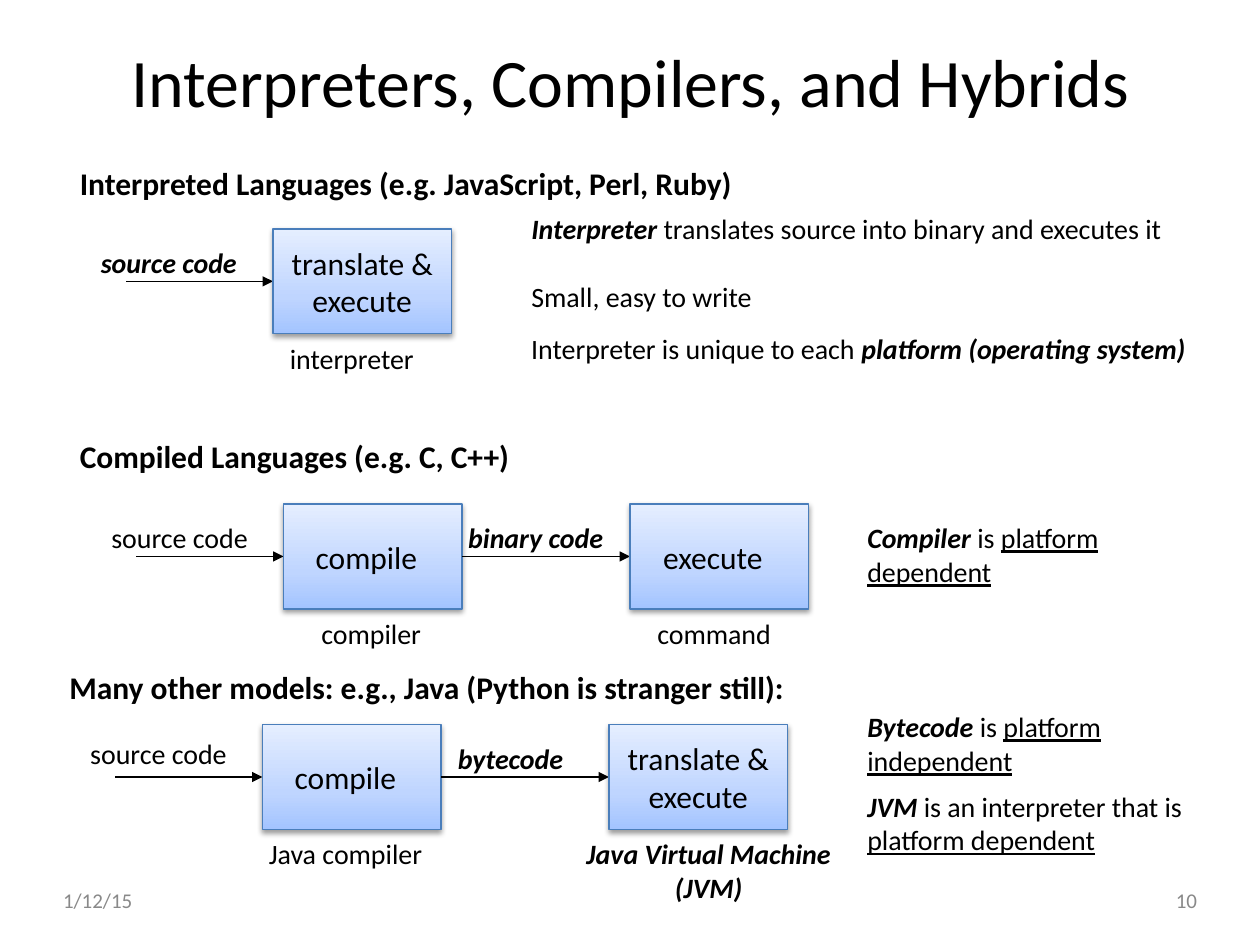
import lxml.etree
import pptx
import pptx.dml.color
import pptx.enum.shapes
import pptx.enum.text
import pptx.oxml
import pptx.oxml.ns
import pptx.util

COLUMNS, ROWS = 120, 90
STAGE_WIDTH, STAGE_HEIGHT = 17, 10
ALIGN = pptx.enum.text.PP_ALIGN
ANCHOR = pptx.enum.text.MSO_ANCHOR
STAGE_STOPS = [(0, "E5EEFF"), (65, "BFD5FF"), (100, "A3C4FF")]


def grid(count):
    """Turn a number of grid columns or rows into a length."""
    return pptx.util.Inches(count / 12)


def color(code):
    """Turn a hex string into a colour."""
    return pptx.dml.color.RGBColor.from_string(code)


def child(parent, tag, **attributes):
    """Append a DrawingML element to a parent."""
    return lxml.etree.SubElement(parent, pptx.oxml.ns.qn(tag), **attributes)


def write(shape, spans, size, align=ALIGN.LEFT, anchor=ANCHOR.TOP, inset=0.05, code="000000"):
    """Fill a shape with one paragraph of (text, style letters) spans."""
    frame = shape.text_frame
    frame.word_wrap = True
    frame.vertical_anchor = anchor
    frame.margin_left = frame.margin_right = pptx.util.Inches(inset)
    frame.margin_top = frame.margin_bottom = pptx.util.Inches(inset)
    para = frame.paragraphs[0]
    para.alignment = align
    for text, style in spans:
        span = para.add_run()
        span.text = text
        span.font.name = "Calibri"
        span.font.size = pptx.util.Pt(size)
        span.font.color.rgb = color(code)
        span.font.bold = "b" in style
        span.font.italic = "i" in style
        span.font.underline = "u" in style


def add_text(page, box, spans, size=16, **options):
    """Place a text box given as column, row, width and height."""
    write(page.shapes.add_textbox(*map(grid, box)), spans, size, **options)


def add_arrow(page, start, end, row):
    """Draw a horizontal arrow between two columns."""
    arrow = page.shapes.add_connector(
        pptx.enum.shapes.MSO_CONNECTOR.STRAIGHT, grid(start), grid(row), grid(end), grid(row))
    arrow.line.color.rgb = color("000000")
    arrow.line.width = pptx.util.Pt(0.75)
    child(arrow.line._get_or_add_ln(), "a:tailEnd", type="triangle")
    child(arrow._element.spPr, "a:effectLst")


def add_stage(page, column, row, label, trim):
    """Draw a shaded stage box whose right inset grows by trim."""
    stage = page.shapes.add_shape(
        pptx.enum.shapes.MSO_SHAPE.RECTANGLE,
        *map(grid, (column, row, STAGE_WIDTH, STAGE_HEIGHT)))
    stage.fill.gradient()
    stage.fill.gradient_angle = 270
    properties = stage._element.spPr
    stops = properties.find(".//" + pptx.oxml.ns.qn("a:gsLst"))
    for stop in list(stops):
        stops.remove(stop)
    for share, code in STAGE_STOPS:
        child(child(stops, "a:gs", pos=str(share * 1000)), "a:srgbClr", val=code)
    stage.line.color.rgb = color("4A7EBB")
    stage.line.width = pptx.util.Pt(0.75)
    stage.shadow.inherit = False
    effects = properties.find(pptx.oxml.ns.qn("a:effectLst"))
    shadow = child(effects, "a:outerShdw", blurRad="38100", dist="20000",
                   dir="5400000", rotWithShape="0")
    child(child(shadow, "a:srgbClr", val="000000"), "a:alpha", val="38000")
    write(stage, [(label, "")], 18, ALIGN.CENTER, ANCHOR.MIDDLE)
    stage.text_frame.margin_right = pptx.util.Inches(0.05 + trim)


def add_pipeline(page, left, top, heading, stages, inputs, captions, notes):
    """Lay out one language model from its left column and top row."""
    shift, rise, title = heading
    add_text(page, (left + shift, top + rise, 89, 4.7), [(title, "b")], 18)
    start = left
    for index, (label, trim) in enumerate(stages):
        column = left + 14 + index * 33
        add_arrow(page, start, column, top + STAGE_HEIGHT / 2)
        add_stage(page, column, top, label, trim)
        start = column + STAGE_WIDTH
    for offset, drop, label, style in inputs:
        add_text(page, (left + offset, top + drop, 18, 4.4), [(label, style)])
    for offset, width, label, style, align in captions:
        add_text(page, (left + offset, top + 10.1, width, 4.4), [(label, style)], align=align)
    for column, drop, width, spans in notes:
        add_text(page, (column, top + drop, width, 7.5), spans)


def add_title(page, box):
    """Place the slide title."""
    add_text(page, box, [("Interpreters, Compilers, and Hybrids", "")], 38.8,
             align=ALIGN.CENTER, anchor=ANCHOR.MIDDLE, inset=0)


def add_footer(page, left, top, width):
    """Place the date and the page number at the two ends of the footer."""
    field = 28
    for column, label, align in (
            (left, "1/12/15", ALIGN.LEFT), (left + width - field, "10", ALIGN.RIGHT)):
        add_text(page, (column, top, field, 3.5), [(label, "")], 12, align=align,
                 anchor=ANCHOR.MIDDLE, inset=0, code="898989")


def main():
    """Build the slide and save it."""
    deck = pptx.Presentation()
    deck.slide_width, deck.slide_height = grid(COLUMNS), grid(ROWS)
    page = deck.slides.add_slide(deck.slide_layouts[6])
    add_title(page, (6, 2, 108, 11.4))
    add_pipeline(
        page, 12, 21.8, (-5, -6.8, "Interpreted Languages (e.g. JavaScript, Perl, Ruby)"),
        [("translate & execute", 0)],
        [(-3, 1, "source code", "bi")],
        [(15, 15, "interpreter", "", ALIGN.LEFT)],
        [(50, -2.2, 63, [("Interpreter", "bi"),
                         (" translates source into binary and executes it", "")]),
         (50, 4.2, 34, [("Small, easy to write", "")]),
         (50, 9.2, 67, [("Interpreter is unique to each ", ""),
                        ("platform (operating system)", "bi")])])
    add_pipeline(
        page, 13, 48, (-6, -7, "Compiled Languages (e.g. C, C++)"),
        [("compile", 0.1), ("execute", 0.1)],
        [(-3, 1, "source code", ""), (31, 1, "binary code", "bi")],
        [(17, 15, "compiler", "", ALIGN.LEFT), (49, 15, "command", "", ALIGN.LEFT)],
        [(82, 1, 26, [("Compiler", "bi"), (" is ", ""), ("platform dependent", "u")])])
    add_pipeline(
        page, 11, 69, (-5, -6, "Many other models: e.g., Java (Python is stranger still):"),
        [("compile", 0.1), ("translate & execute", 0)],
        [(-3, 0.6, "source code", ""), (32, 1, "bytecode", "bi")],
        [(14, 18, "Java compiler", "", ALIGN.LEFT),
         (42, 29, "Java Virtual Machine (JVM)", "bi", ALIGN.CENTER)],
        [(82, -2, 33, [("Bytecode", "bi"), (" is ", ""), ("platform independent", "u")]),
         (82, 5.6, 33, [("JVM", "bi"), (" is an interpreter that is ", ""),
                        ("platform dependent", "u")])])
    add_footer(page, 6, 84, 108)
    deck.save("out.pptx")


if __name__ == "__main__":
    main()
